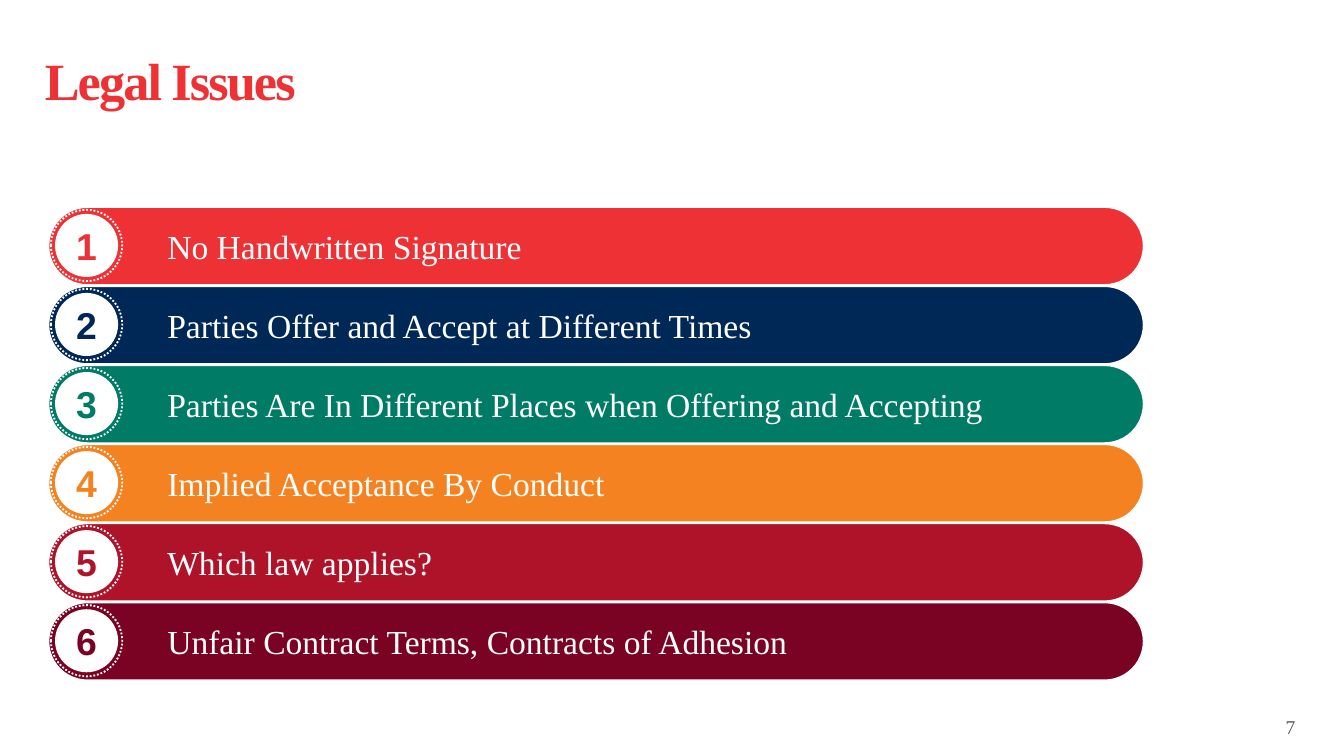
from dataclasses import dataclass
from typing import Optional

from pptx import Presentation
from pptx.dml.color import RGBColor
from pptx.enum import dml, shapes, text
from pptx.util import Pt

COLORS = {
    "red": "EE3135",
    "navy": "002856",
    "green": "007B66",
    "orange": "F58220",
    "crimson": "AE132A",
    "maroon": "7A0223",
    "white": "FFFFFF",
    "gray": "5F5F5F",
}
SERIF, SANS = "Times New Roman", "Arial"
BAR_LEFT, BAR_TOP, BAR_W, BAR_H = 25.9, 110.9, 586.8, 41.8
ROW_PITCH = 42.36
RING_D, DISC_D = 38.2, 33.8
BADGE_X, BADGE_DY = 46.4, 20.6
INSET, BAR_INSET = 5.76, 57.6


@dataclass
class Issue:
    label: str
    color: str


@dataclass
class Box:
    left: float
    top: float
    width: float
    height: float

    def emu(self) -> tuple:
        return Pt(self.left), Pt(self.top), Pt(self.width), Pt(self.height)


@dataclass
class Style:
    size: float
    color: str
    font: str = SERIF
    bold: bool = False
    align: text.PP_ALIGN = text.PP_ALIGN.LEFT
    anchor: text.MSO_ANCHOR = text.MSO_ANCHOR.MIDDLE


ISSUES = [
    Issue("No Handwritten Signature", "red"),
    Issue("Parties Offer and Accept at Different Times", "navy"),
    Issue("Parties Are In Different Places when Offering and Accepting", "green"),
    Issue("Implied Acceptance By Conduct", "orange"),
    Issue("Which law applies?", "crimson"),
    Issue("Unfair Contract Terms, Contracts of Adhesion", "maroon"),
]


def rgb(name: str) -> RGBColor:
    return RGBColor.from_string(COLORS[name])


def write(sp, content: str, style: Style, inset: float = 0, left: Optional[float] = None):
    tf = sp.text_frame
    tf.word_wrap = True
    tf.vertical_anchor = style.anchor
    tf.margin_left = Pt(inset if left is None else left)
    tf.margin_top = tf.margin_right = tf.margin_bottom = Pt(inset)
    p = tf.paragraphs[0]
    p.text = content
    p.alignment = style.align
    p.font.name = style.font
    p.font.size = Pt(style.size)
    p.font.bold = style.bold
    p.font.color.rgb = rgb(style.color)
    return p


def add_shape(parent, kind: shapes.MSO_SHAPE, box: Box, fill: str, outlined: bool):
    sp = parent.shapes.add_shape(kind, *box.emu())
    sp.shadow.inherit = False
    sp.fill.solid()
    sp.fill.fore_color.rgb = rgb(fill)
    if outlined:
        sp.line.color.rgb = rgb("white")
        sp.line.width = Pt(1)
    else:
        sp.line.fill.background()
    return sp


def add_circle(parent, cy: float, diameter: float, fill: str, outlined: bool):
    box = Box(BADGE_X - diameter / 2, cy - diameter / 2, diameter, diameter)
    return add_shape(parent, shapes.MSO_SHAPE.OVAL, box, fill, outlined)


def add_issue(s, index: int, issue: Issue) -> None:
    top = BAR_TOP + index * ROW_PITCH
    row = s.shapes.add_group_shape()
    bar = add_shape(row, shapes.MSO_SHAPE.ROUNDED_RECTANGLE,
                    Box(BAR_LEFT, top, BAR_W, BAR_H), issue.color, True)
    bar.adjustments[0] = 0.5
    write(bar, issue.label, Style(18, "white"), INSET, BAR_INSET)
    ring = add_circle(row, top + BADGE_DY, RING_D, issue.color, True)
    ring.line.dash_style = dml.MSO_LINE.ROUND_DOT
    disc = add_circle(row, top + BADGE_DY, DISC_D, "white", False)
    write(disc, str(index + 1),
          Style(20, issue.color, SANS, True, text.PP_ALIGN.CENTER), INSET)


def add_text(s, box: Box, content: str, style: Style):
    return write(s.shapes.add_textbox(*box.emu()), content, style)


def main() -> None:
    prs = Presentation()
    prs.slide_width, prs.slide_height = Pt(720), Pt(405)
    s = prs.slides.add_slide(prs.slide_layouts[6])
    title = add_text(s, Box(24, 32.4, 670, 36), "Legal Issues",
                     Style(28, "red", bold=True, anchor=text.MSO_ANCHOR.TOP))
    title.line_spacing = 0.8
    title.runs[0].font._element.set("spc", "-100")
    add_text(s, Box(630, 381.6, 64, 15.8), "7",
             Style(10.5, "gray", align=text.PP_ALIGN.RIGHT))
    for index, issue in enumerate(ISSUES):
        add_issue(s, index, issue)
    prs.save("out.pptx")


if __name__ == "__main__":
    main()
